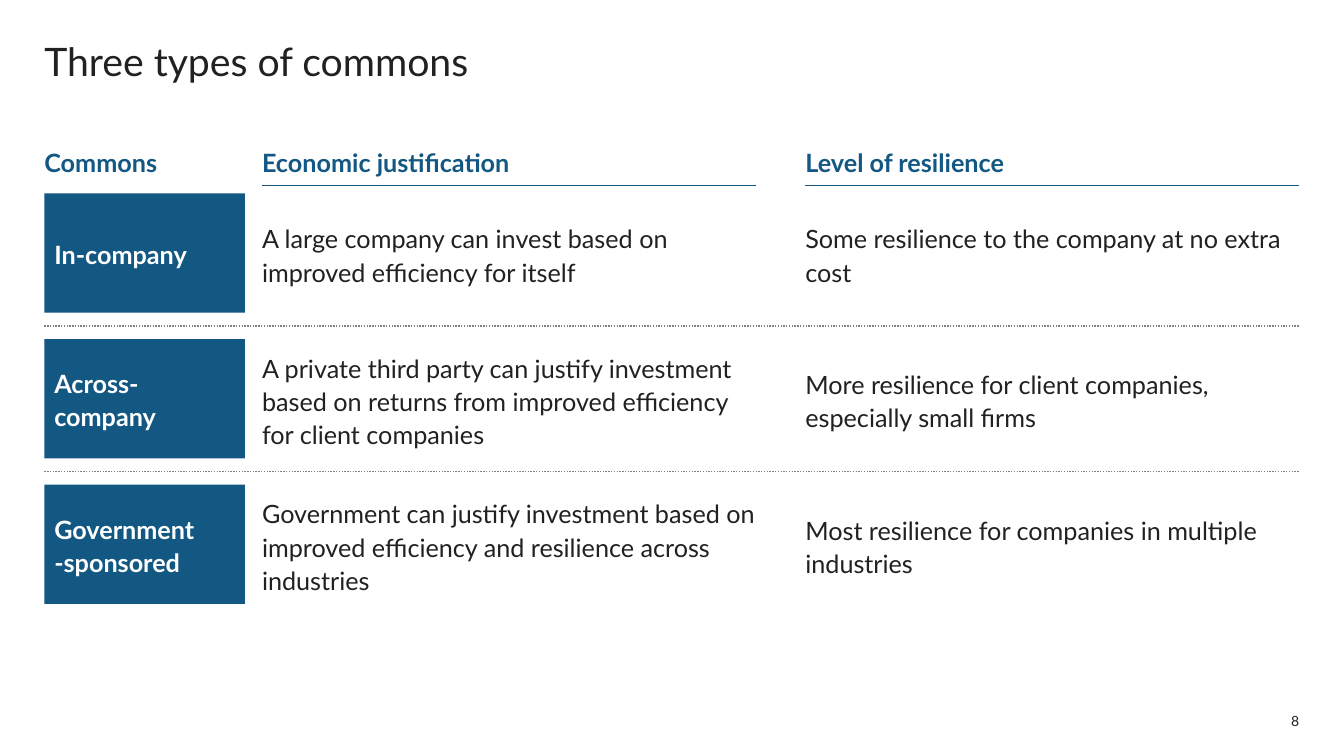
import pptx
import pptx.util
import pptx.dml.color
import pptx.enum.dml
import pptx.enum.shapes
import pptx.enum.text
import lxml.etree

Pt = pptx.util.Pt
ANCHOR = pptx.enum.text.MSO_ANCHOR
ALIGN = pptx.enum.text.PP_ALIGN
BLUE, INK, GREY, WHITE = "135783", "212121", "808080", "FFFFFF"

prs = pptx.Presentation()
prs.slide_width, prs.slide_height = Pt(960), Pt(540)
s = prs.slides.add_slide(prs.slide_layouts[6])


def write(text, x, y, w, h, size=18, color=INK, bold=False, anchor=ANCHOR.TOP,
          align=ALIGN.LEFT, spacing=1.1, fill=None, inset=0):
    if fill:
        sp = s.shapes.add_shape(pptx.enum.shapes.MSO_SHAPE.RECTANGLE, Pt(x), Pt(y), Pt(w), Pt(h))
        sp.shadow.inherit = False
        sp.fill.solid()
        sp.fill.fore_color.rgb = pptx.dml.color.RGBColor.from_string(fill)
        sp.line.fill.background()
    else:
        sp = s.shapes.add_textbox(Pt(x), Pt(y), Pt(w), Pt(h))
    tf = sp.text_frame
    tf.word_wrap = True
    tf.vertical_anchor = anchor
    tf.margin_left = tf.margin_top = tf.margin_right = tf.margin_bottom = Pt(inset)
    tf.text = text
    for p in tf.paragraphs:
        p.alignment = align
        p.line_spacing = spacing
        for r in p.runs:
            r.font.name, r.font.size, r.font.bold = "Lato", Pt(size), bold
            r.font.color.rgb = pptx.dml.color.RGBColor.from_string(color)


def rule(x1, x2, y, color, dash=None):
    c = s.shapes.add_connector(pptx.enum.shapes.MSO_CONNECTOR.STRAIGHT, Pt(x1), Pt(y), Pt(x2), Pt(y))
    c.line.width = Pt(1)
    c.line.color.rgb = pptx.dml.color.RGBColor.from_string(color)
    if dash:
        c.line.dash_style = dash
    lxml.etree.SubElement(c._element.spPr, pptx.oxml.ns.qn("a:effectLst"))


left, right = 31.7, 928.1
label_w, text_w = 143.3, 352.8
columns = [
    ("Commons", left, label_w),
    ("Economic justification", 187.2, text_w),
    ("Level of resilience", right - text_w, text_w),
]
rows = [
    ("In-company",
     ("A large company can invest based on improved efficiency for itself", 2),
     ("Some resilience to the company at no extra cost", 2)),
    ("Across-company",
     ("A private third party can justify investment based on returns from "
      "improved efficiency for client companies", 3),
     ("More resilience for client companies, especially small firms", 2)),
    ("Government\n-sponsored",
     ("Government can justify investment based on improved efficiency and "
      "resilience across industries", 3),
     ("Most resilience for companies in multiple industries", 2)),
]
row_top, row_h, row_gap, line_h = 138.2, 85.2, 18.8, 23.2

write("Three types of commons", left, 26.6, right - left, 33.8, size=28, spacing=1)
write("8", right - 12.2, 509, 12.2, 12.2, size=10, anchor=ANCHOR.MIDDLE, align=ALIGN.RIGHT, spacing=1)

for heading, x, w in columns:
    write(heading, x, 105.1, w, 21.6, color=BLUE, bold=True, anchor=ANCHOR.BOTTOM)
    if x > left:
        rule(x, x + w, 132.5, BLUE)

for i, (label, *cells) in enumerate(rows):
    y = row_top + i * (row_h + row_gap)
    write(label, left, y, label_w, row_h, color=WHITE, bold=True, anchor=ANCHOR.MIDDLE,
          fill=BLUE, inset=7.2)
    for (text, lines), (heading, x, w) in zip(cells, columns[1:]):
        h = lines * line_h
        write(text, x, y + (row_h - h) / 2, w, h)
    if i:
        rule(left, right, y - row_gap / 2, GREY, pptx.enum.dml.MSO_LINE.ROUND_DOT)

prs.save("out.pptx")
